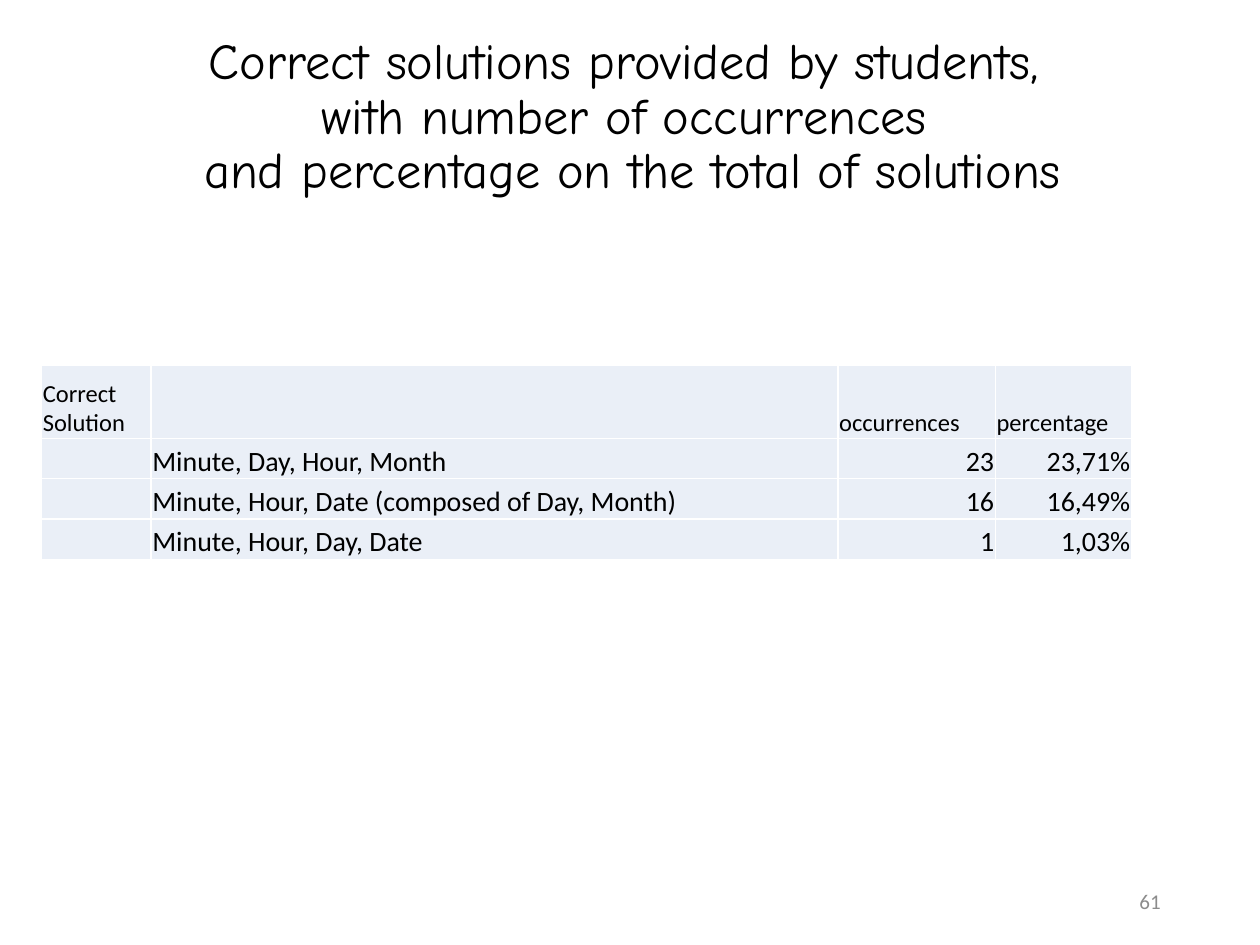
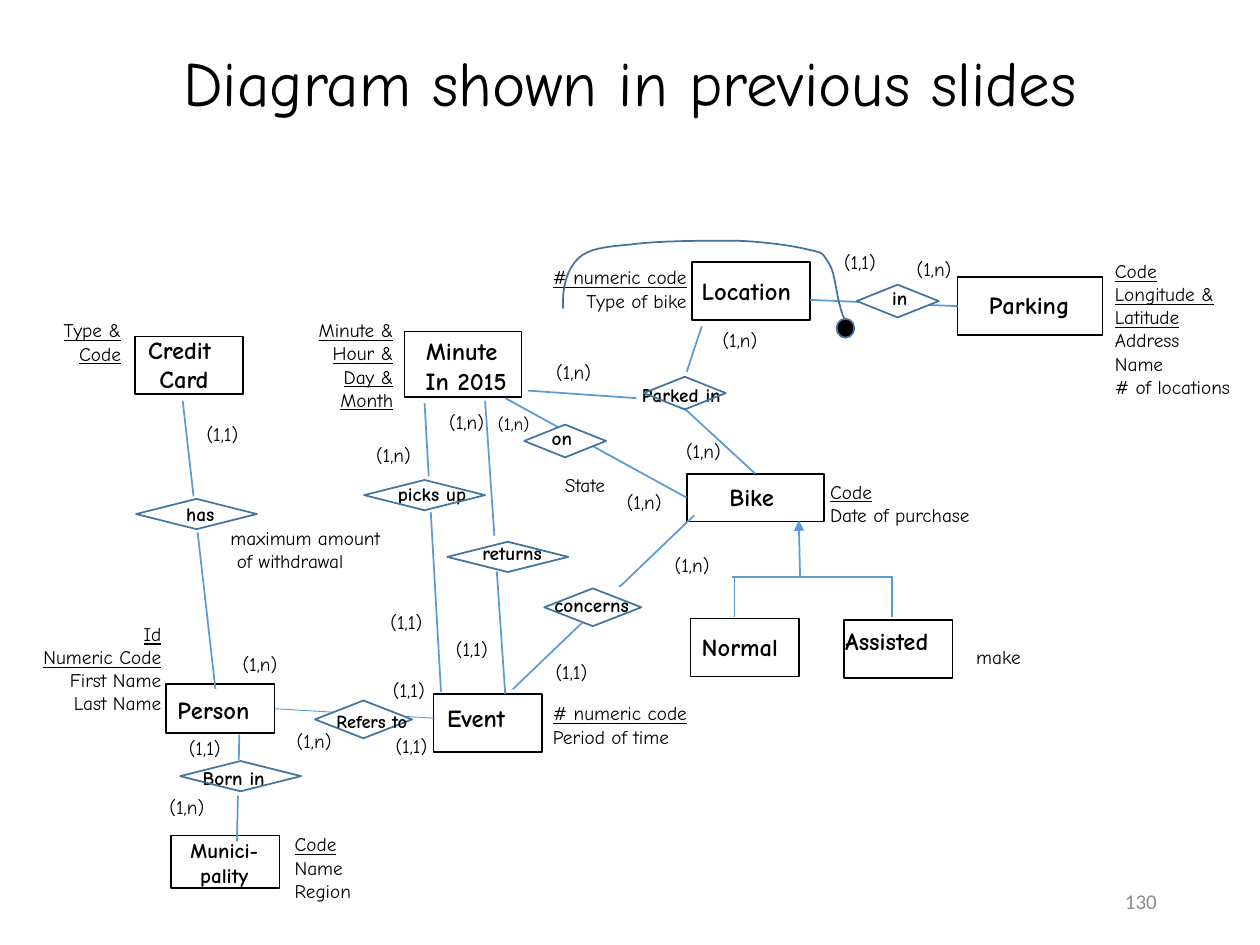
from dataclasses import dataclass

import pptx
import pptx.dml.color
import pptx.enum.dml
import pptx.enum.shapes
import pptx.enum.text
import pptx.oxml
import pptx.oxml.ns
import pptx.util

ALIGN = pptx.enum.text.PP_ALIGN
ANCHOR = pptx.enum.text.MSO_ANCHOR
SHAPE = pptx.enum.shapes.MSO_SHAPE
LEFT, MID, RIGHT = ALIGN.LEFT, ALIGN.CENTER, ALIGN.RIGHT

# Shared look
HAND, PLAIN = "Comic Neue", "Calibri"
BLACK, WHITE, GREY = "000000", "FFFFFF", "8C8C8C"
BLUE, STEEL, PALE = "5B9BD5", "43739E", "EAEFF7"


@dataclass
class Label:
    text: str
    x: float
    y: float
    wide: float
    align: ALIGN = LEFT
    keys: int = 0  # leading lines that are underlined
    size: float = 11
    bold: bool = False
    fill: bool = False


@dataclass
class Box:
    x: float
    y: float
    wide: float
    high: float
    fill: str = ""


@dataclass
class Link:
    x1: float
    y1: float
    x2: float
    y2: float
    width: float = 1
    join: tuple[str, int] | None = None  # box and side at the end
    arrow: bool = False


# Places are planned on a grid of 2.54 cm units
def unit(count: float) -> pptx.util.Length:
    return pptx.util.Cm(count * 2.54)


def paint(target, colour: str) -> None:
    """Colour a fill, or a font's or line's fill."""
    if colour:
        target.solid()
        target.fore_color.rgb = pptx.dml.color.RGBColor.from_string(colour)
    else:
        target.background()


def style(para, size: float, name: str = HAND, colour: str = BLACK,
          align: ALIGN = LEFT, bold: bool = False, under: bool = False) -> None:
    para.alignment = align
    font = para.font
    font.name, font.size = name, pptx.util.Pt(size)
    font.bold, font.underline = bold, under
    paint(font.fill, colour)


def write(slide, text: str, box: Box, size: float, align: ALIGN,
          name: str = HAND, colour: str = BLACK):
    """Add a wrapped text block centred on its height."""
    frame = slide.shapes.add_textbox(
        unit(box.x), unit(box.y), unit(box.wide), unit(box.high)).text_frame
    frame.word_wrap, frame.vertical_anchor = True, ANCHOR.MIDDLE
    para = frame.paragraphs[0]
    para.text = text
    style(para, size, name, colour, align)
    return para


def start(deck, title: str, place: Box, size: float, page: str, left: float):
    """Add a slide with its title and page number."""
    slide = deck.slides.add_slide(deck.slide_layouts[6])
    write(slide, title, place, size, MID).line_spacing = 0.9
    write(slide, page, Box(left, 6.95, 2.25, 0.4), 12, RIGHT, PLAIN, GREY)
    return slide


def tag(slide, label: Label) -> None:
    lines = label.text.split("\n")
    high = 0.1 + len(lines) * label.size * 0.0168
    shape = slide.shapes.add_textbox(
        unit(label.x), unit(label.y), unit(label.wide), unit(high))
    if label.fill:
        paint(shape.fill, WHITE)
    frame = shape.text_frame
    frame.word_wrap = False
    frame.auto_size = pptx.enum.text.MSO_AUTO_SIZE.SHAPE_TO_FIT_TEXT
    for row, line in enumerate(lines):
        para = frame.add_paragraph() if row else frame.paragraphs[0]
        para.text = line
        style(para, label.size, align=label.align, bold=label.bold,
              under=row < label.keys)


def draw(slide, kind: SHAPE, box: Box, line: str):
    shape = slide.shapes.add_shape(
        kind, unit(box.x), unit(box.y), unit(box.wide), unit(box.high))
    shape.shadow.inherit = False
    paint(shape.fill, box.fill)
    paint(shape.line.fill, line)
    shape.line.width = pptx.util.Pt(1)
    return shape


def node(tag_name: str, inner: str = "", **attrs: str):
    text = " ".join(f'{key}="{val}"' for key, val in attrs.items())
    return pptx.oxml.parse_xml(
        f'<a:{tag_name} {pptx.oxml.ns.nsdecls("a")} {text}>{inner}</a:{tag_name}>')


def connect(slide, link: Link, ends: dict) -> None:
    line = slide.shapes.add_connector(
        pptx.enum.shapes.MSO_CONNECTOR.STRAIGHT, unit(link.x1), unit(link.y1),
        unit(link.x2), unit(link.y2))
    if link.join:
        name, side = link.join
        line.end_connect(ends[name], side)
    paint(line.line.fill, BLUE)
    line.line.width = pptx.util.Pt(link.width)
    if link.arrow:
        line.line._get_or_add_ln().append(node("tailEnd", type="triangle"))
    line._element.spPr.append(node("effectLst"))


def curve(slide, first: tuple, parts: list) -> None:
    """Trace joined cubic arcs as one open outline."""
    steps, spots, last = 8, [], first
    for one, two, end in parts:
        for step in range(1, steps + 1):
            t = step / steps
            u = 1 - t
            spots.append(tuple(
                unit(u**3 * a + 3 * u * u * t * b + 3 * u * t * t * c + t**3 * d)
                for a, b, c, d in zip(last, one, two, end)))
        last = end
    trace = slide.shapes.build_freeform(unit(first[0]), unit(first[1]))
    trace.add_line_segments(spots, close=False)
    shape = trace.convert_to_shape()
    shape.shadow.inherit = False
    paint(shape.fill, "")
    paint(shape.line.fill, STEEL)
    shape.line.width = pptx.util.Pt(1)


# Slide 61: table of correct answers
WIDTHS = [0.87, 5.45, 1.25, 1.08]
HEIGHTS = [0.58, 0.32, 0.32, 0.32]
ROWS = [
    ("Correct Solution", "", "occurrences", "percentage"),
    ("", "Minute, Day, Hour, Month", "23", "23,71%"),
    ("", "Minute, Hour, Date (composed of Day, Month)", "16", "16,49%"),
    ("", "Minute, Hour, Day, Date", "1", "1,03%"),
]


def edge(cell) -> None:
    props = cell._tc.get_or_add_tcPr()
    inner = f'<a:solidFill><a:srgbClr val="{WHITE}"/></a:solidFill>'
    for spot, side in enumerate(("lnL", "lnR", "lnT", "lnB")):
        props.insert(spot, node(side, inner, w="12700"))


def answers(deck) -> None:
    slide = start(
        deck, "Correct solutions provided by students, \vwith number of occurrences "
        "\vand percentage on the total of solutions",
        Box(0.33, 0.52, 9.38, 0.83), 28.8, "61", 7.06)
    table = slide.shapes.add_table(
        len(ROWS), len(WIDTHS), unit(0.33), unit(2.9),
        unit(sum(WIDTHS)), unit(sum(HEIGHTS))).table
    table.first_row = table.horz_banding = False
    for col, wide in zip(table.columns, WIDTHS):
        col.width = unit(wide)
    for row, (high, texts) in enumerate(zip(HEIGHTS, ROWS)):
        table.rows[row].height = unit(high)
        for col, text in enumerate(texts):
            cell = table.cell(row, col)
            cell.margin_left = cell.margin_right = cell.margin_top = unit(0.01)
            cell.margin_bottom = 0
            cell.vertical_anchor = ANCHOR.BOTTOM
            paint(cell.fill, PALE)
            edge(cell)
            para = cell.text_frame.paragraphs[0]
            para.text = text
            style(para, 16 if row else 14, PLAIN,
                  align=RIGHT if row and col > 1 else LEFT)


# Slide 130: entity diagram
BOXES = {
    "Credit": Box(1.07, 2.67, 0.86, 0.46),
    "Normal": Box(5.48, 4.91, 0.86, 0.46),
    "Place": Box(5.49, 2.08, 0.94, 0.46),
    "Town": Box(1.36, 6.63, 0.86, 0.42),
    "Bike": Box(5.45, 3.76, 1.09, 0.38),
    "Minute": Box(3.21, 2.63, 0.93, 0.52),
    "Event": Box(3.44, 5.51, 0.86, 0.46),
    "Person": Box(1.32, 5.43, 0.86, 0.39),
    "Parking": Box(7.6, 2.2, 1.15, 0.46),
    "Assist": Box(6.7, 4.92, 0.86, 0.46),
}
LINKS = [
    Link(3.45, 5.7, 2.18, 5.63, width=0.5, join=("Person", 3)),
    Link(6.43, 2.38, 7.6, 2.43, join=("Parking", 1)),
    Link(1.45, 3.18, 1.71, 5.47),
    Link(1.9, 5.83, 1.88, 6.68),
    Link(5.51, 4.09, 4.07, 5.47),
    Link(3.37, 3.2, 3.5, 5.49),
    Link(3.85, 3.18, 4.01, 5.51),
    Link(6.35, 4.57, 6.34, 4.13, arrow=True),
    Link(5.83, 4.9, 5.83, 4.58),
    Link(4.19, 3.1, 5.05, 3.16),
    Link(5.57, 2.59, 5.45, 2.95),
    Link(5.43, 3.24, 5.99, 3.76, join=("Bike", 0)),
    Link(4.01, 3.16, 5.45, 3.95, join=("Bike", 1)),
    Link(7.09, 4.58, 5.81, 4.58),
    Link(7.08, 4.9, 7.08, 4.58),
]
SOLID = [Box(2.5, 5.56, 0.77, 0.3, WHITE), Box(4.16, 3.37, 0.65, 0.26, WHITE),
         Box(6.8, 2.26, 0.65, 0.26, WHITE)]
WIDE = [(1.08, 3.96), (1.43, 6.04), (2.89, 3.81), (3.55, 4.3)]
HOLLOW = [Box(x, y, 0.96, 0.24) for x, y in WIDE] + [
    Box(5.11, 2.99, 0.65, 0.26), Box(4.32, 4.67, 0.77, 0.3)]

NAMES = [
    Label("Minute \nIn 2015", 3.21, 2.62, 0.98, MID, size=14, bold=True),
    Label("Credit \nCard", 1.02, 2.61, 0.88, MID, size=14, bold=True),
    Label("Munici-\npality", 1.27, 6.6, 1.02, MID, size=12, bold=True),
] + [Label(text, x, y, wide, size=14, bold=True) for text, x, y, wide in (
    ("Bike", 5.69, 3.78, 0.6), ("Event", 3.45, 5.53, 0.73),
    ("Location", 5.47, 2.14, 0.98), ("Normal", 5.47, 4.97, 0.88),
    ("Person", 1.31, 5.47, 0.82), ("Parking", 7.75, 2.25, 0.88),
    ("Assisted", 6.61, 4.92, 1.01))]
VERBS = [Label(text, x, y, wide, RIGHT, bold=True, fill=True)
         for text, x, y, wide in (
    ("picks up", 3, 3.78, 0.8), ("returns", 3.66, 4.25, 0.74),
    ("has", 1.35, 3.94, 0.45), ("Born in", 1.48, 6.03, 0.72),
    ("concerns", 4.25, 4.66, 0.84))] + [
    Label("Refers to", 2.41, 5.59, 0.92, RIGHT, size=10.5, bold=True),
    Label("Parked in", 4.79, 2.99, 1.03, RIGHT, bold=True),
    Label("on", 4.28, 3.33, 0.36, RIGHT, bold=True),
    Label("in", 6.97, 2.22, 0.33, RIGHT, bold=True),
]
TRAITS = [
    Label("# numeric code\nType of bike", 4.23, 2.06, 1.32, RIGHT, 1),
    Label("Code\nDate of purchase", 6.49, 3.76, 1.44, keys=1),
    Label("Code\nName\nRegion", 2.24, 6.56, 0.67, keys=1),
    Label("# numeric code\nPeriod of time", 4.29, 5.52, 1.32, keys=1),
    Label("maximum amount\n of withdrawal", 1.73, 4.13, 1.41, fill=True),
    Label("Type &\nCode", 0.36, 2.48, 0.7, RIGHT, 2),
    Label("State", 4.28, 3.71, 0.62, RIGHT, fill=True),
    Label("Id\nNumeric Code\nFirst Name\nLast Name", 0.18, 4.89, 1.2, RIGHT, 2),
    Label("Code\nLongitude &\nLatitude\nAddress\nName\n# of locations",
          8.75, 2.01, 1.22, keys=3),
    Label("make", 7.63, 5.07, 0.57, RIGHT),
    Label("Minute &\nHour &\nDay &\nMonth", 2.37, 2.48, 0.85, RIGHT, 4),
]
ONE = [(1.5, 3.3), (2.96, 4.79), (3.48, 5.01), (6.56, 1.94), (3, 5.78),
       (2.98, 5.33), (4.27, 5.19), (1.36, 5.79)]
MANY = [(4.28, 2.81), (1.21, 6.26), (5.31, 3.44), (5.6, 2.56), (3.43, 3.21),
        (2.85, 3.47), (2.22, 5.74), (5.22, 4.34), (4.84, 3.84), (1.79, 5.13),
        (7.14, 1.99)]
COUNTS = [Label("(1,1)", x, y, 0.49, RIGHT) for x, y in ONE] + [
    Label("(1,n)", x, y, 0.51, RIGHT) for x, y in MANY] + [
    Label("(1,n)", 3.82, 3.23, 0.48, RIGHT, size=10)]
ARCS = [
    ((4.46, 2.28), (4.5, 2.14), (4.59, 2.05)),
    ((4.68, 1.97), (4.8, 1.96), (5.01, 1.94)),
    ((5.22, 1.91), (5.61, 1.91), (5.84, 1.91)),
    ((6.08, 1.92), (6.29, 1.95), (6.41, 1.98)),
    ((6.54, 2.01), (6.52, 2), (6.58, 2.09)),
    ((6.64, 2.19), (6.63, 2.36), (6.7, 2.53)),
]


def diagram(deck) -> None:
    slide = start(deck, "Diagram shown in previous slides",
                  Box(0.69, 0.4, 8.62, 0.57), 36, "130", 7.03)
    ends = {name: draw(slide, SHAPE.RECTANGLE, box, BLACK)
            for name, box in BOXES.items()}
    for link in LINKS:
        connect(slide, link, ends)
    # Solid diamonds hide the lines, hollow ones frame filled labels
    for box in SOLID:
        draw(slide, SHAPE.DIAMOND, box, STEEL)
    for label in VERBS + TRAITS + NAMES + COUNTS:
        tag(slide, label)
    for box in HOLLOW:
        draw(slide, SHAPE.DIAMOND, box, STEEL)
    # Key marker for the location
    draw(slide, SHAPE.OVAL, Box(6.64, 2.53, 0.14, 0.15, BLACK), STEEL)
    curve(slide, (4.47, 2.45), ARCS)


def main() -> None:
    deck = pptx.Presentation()
    deck.slide_width, deck.slide_height = unit(10), unit(7.5)
    answers(deck)
    diagram(deck)
    deck.save("out.pptx")


if __name__ == "__main__":
    main()
